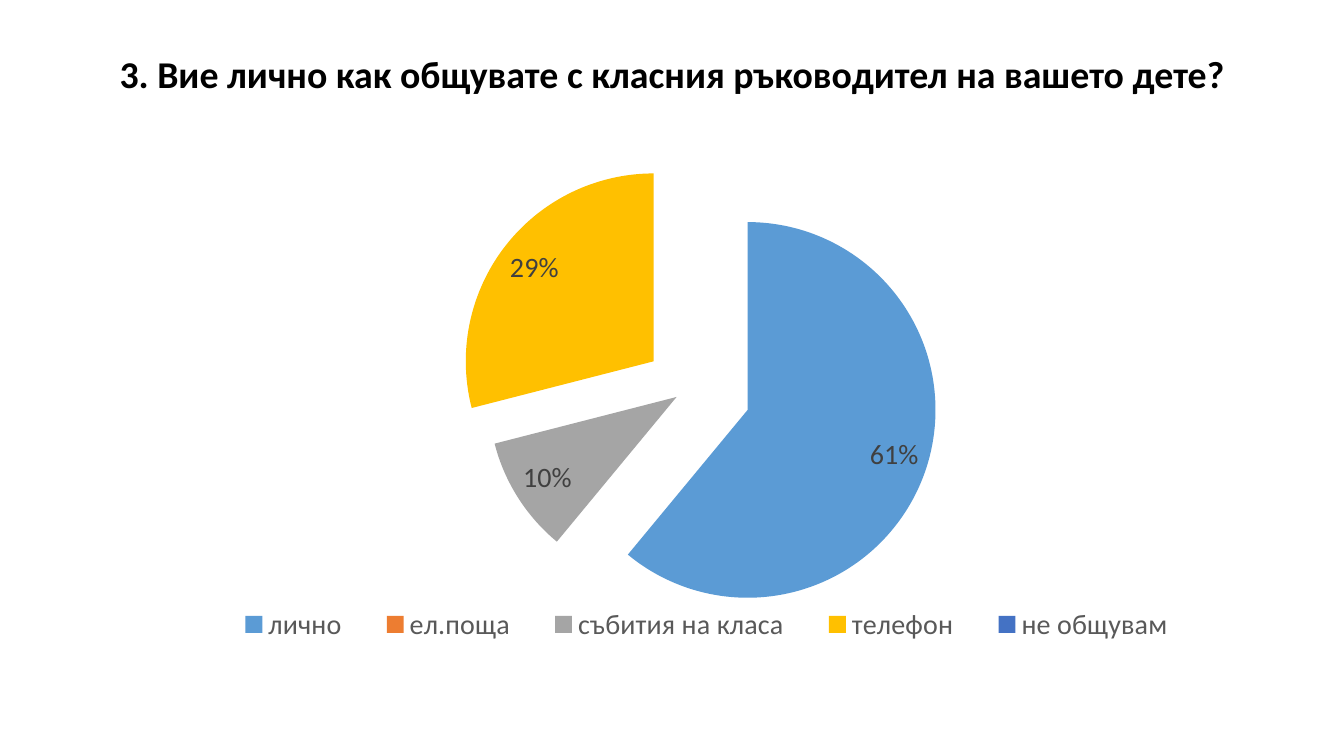
from pptx import Presentation
from pptx.chart.data import CategoryChartData as ChartData
from pptx.dml.color import RGBColor
from pptx.enum.chart import XL_CHART_TYPE as ChartType
from pptx.enum.chart import XL_LABEL_POSITION as LabelPosition
from pptx.enum.chart import XL_LEGEND_POSITION as LegendPosition
from pptx.enum.text import MSO_ANCHOR as Anchor
from pptx.enum.text import PP_ALIGN as Align
from pptx.oxml import parse_xml
from pptx.oxml.ns import nsdecls, qn
from pptx.util import Inches, Pt

COLORS = {
    "title": "000000", "legend": "595959", "label": "404040",
    "blue": "5B9BD5", "orange": "ED7D31", "gray": "A5A5A5",
    "gold": "FFC000", "navy": "4472C4",
}
ANSWERS = [
    ("лично", 0.61, "blue", 33),
    ("ел.поща", 0, "orange", 0),
    ("събития на класа", 0.1, "gray", 8),
    ("телефон", 0.29, "gold", 24),
    ("не общувам", 0, "navy", 0),
]
WIDTH, HEIGHT = 13.33, 7.5
PLOT_AREA = {"x": 0.03, "y": 0.08, "w": 0.97, "h": 0.71}
LEGEND_AREA = {"x": 0.1, "y": 0.84, "w": 0.86, "h": 0.08}


def style_font(font, size, color, bold=False):
    """Give a font the slide's typeface with a size and colour."""
    font.name, font.size, font.bold = "Calibri", Pt(size), bold
    font.color.rgb = RGBColor.from_string(COLORS[color])


def write_text(frame, text, size=27, color="title", bold=False, align=Align.CENTER):
    """Fill a text frame with one formatted paragraph."""
    paragraph = frame.paragraphs[0]
    paragraph.alignment, paragraph.line_spacing = align, 0.9
    run = paragraph.add_run()
    run.text = text
    style_font(run.font, size, color, bold)


class SurveySlide:
    """Hold the slide and place elements by shares of its size."""

    def __init__(self, presentation):
        """Add a title-only slide."""
        self.slide = presentation.slides.add_slide(presentation.slide_layouts[5])

    def box(self, left, top, width, height):
        """Turn shares of the slide into lengths."""
        return (Inches(left * WIDTH), Inches(top * HEIGHT),
                Inches(width * WIDTH), Inches(height * HEIGHT))

    def title(self, text, *shares):
        """Place and format the title placeholder."""
        title = self.slide.shapes.title
        title.left, title.top, title.width, title.height = self.box(*shares)
        frame = title.text_frame
        frame.word_wrap, frame.vertical_anchor = True, Anchor.MIDDLE
        frame.margin_bottom = Inches(0.72)
        write_text(frame, text, bold=True)

    def pie(self, answers, *shares):
        """Draw an exploded pie chart with percentages and a legend."""
        data = ChartData(number_format="0%")
        data.categories = [answer[0] for answer in answers]
        data.add_series("Series 1", [answer[1] for answer in answers])
        chart = self.slide.shapes.add_chart(ChartType.PIE, *self.box(*shares), data).chart
        chart.has_title = False
        style_font(chart.font, 10, "title")

        chart.has_legend = True
        chart.legend.position = LegendPosition.BOTTOM
        chart.legend.include_in_layout = False
        style_font(chart.legend.font, 20, "legend")

        plot = chart.plots[0]
        plot.vary_by_categories = True
        series = plot.series[0]
        for index, (_, _, color, explosion) in enumerate(answers):
            fill = series.points[index].format.fill
            fill.solid()
            fill.fore_color.rgb = RGBColor.from_string(COLORS[color])
            point = series._element.findall(qn("c:dPt"))[index]
            point.find(qn("c:spPr")).addprevious(
                parse_xml(f'<c:explosion {nsdecls("c")} val="{explosion}"/>'))

        labels = series.data_labels
        labels.show_value = True
        labels.number_format, labels.number_format_is_linked = "0%;;", False
        labels.position = LabelPosition.INSIDE_END
        style_font(labels.font, 20, "label")

        self.set_layout(chart._chartSpace.chart.plotArea, 0, PLOT_AREA, "inner")
        self.set_layout(chart.legend._element, 1, LEGEND_AREA)

    def set_layout(self, element, index, area, target=None):
        """Fix a chart part by shares of the chart."""
        for layout in element.findall(qn("c:layout")):
            element.remove(layout)
        inner = f'<c:layoutTarget val="{target}"/>' if target else ""
        modes = "".join(f'<c:{key}Mode val="edge"/>' for key in "xy")
        sizes = "".join(f'<c:{key} val="{value}"/>' for key, value in area.items())
        element.insert(index, parse_xml(
            f'<c:layout {nsdecls("c")}><c:manualLayout>{inner}'
            f"{modes}{sizes}</c:manualLayout></c:layout>"))


def main():
    """Build and save the presentation."""
    presentation = Presentation()
    presentation.slide_width, presentation.slide_height = Inches(WIDTH), Inches(HEIGHT)
    survey = SurveySlide(presentation)
    survey.title("3. Вие лично как общувате с класния ръководител на вашето дете?",
                 0.07, 0.05, 0.86, 0.19)
    survey.pie(ANSWERS, 0.07, 0.21, 0.86, 0.7)
    presentation.save("out.pptx")


if __name__ == "__main__":
    main()
